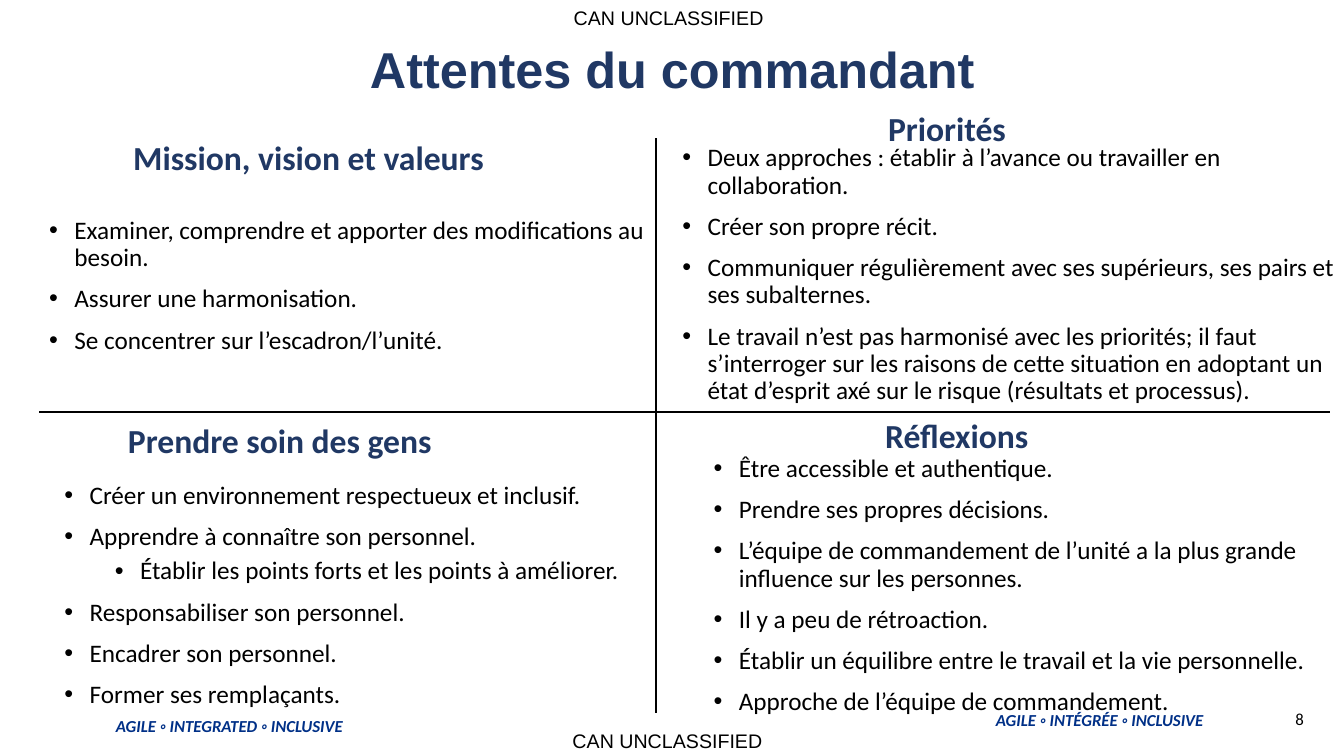
"""Builds the four-quadrant slide on the commander's expectations."""
from dataclasses import dataclass

from lxml import etree
from pptx import Presentation
from pptx import util as u
from pptx.dml.color import RGBColor
from pptx.enum import shapes, text
from pptx.oxml import ns

COLORS = {"text": "000000", "heading": "203864", "motto": "003087"}
INDENT = 0.25
SUB_INDENT = 0.75


@dataclass(frozen=True)
class Box:
    left: float
    top: float
    width: float
    height: float


@dataclass(frozen=True)
class Label:
    box: Box
    words: str
    size: float
    color: str = "text"
    font: str = "Calibri"
    bold: bool = False
    italic: bool = False
    centered: bool = False
    wrap: bool = True
    inset: bool = True
    bottom: bool = False
    spacing: float = 1.0


@dataclass(frozen=True)
class Bullet:
    words: str
    level: int = 0


@dataclass(frozen=True)
class Quadrant:
    heading: Label
    box: Box
    bullets: tuple[Bullet, ...]


@dataclass(frozen=True)
class Divider:
    x1: float
    y1: float
    x2: float
    y2: float


def heading(box: Box, words: str, centered: bool = False) -> Label:
    return Label(box, words, 24, "heading", bold=True, centered=centered, spacing=0.9)


def marking(box: Box, inset: bool) -> Label:
    return Label(box, "CAN UNCLASSIFIED", 14, font="Arial", wrap=False, inset=inset)


def motto(box: Box, words: str, inset: bool, bottom: bool) -> Label:
    return Label(box, words, 12, "motto", bold=True, italic=True,
                 inset=inset, bottom=bottom)


LABELS = (
    marking(Box(5.69, 0.06, 1.96, 0.3), inset=False),
    motto(Box(1.15, 6.9, 2.5, 0.4), "AGILE ◦ INTEGRATED ◦ INCLUSIVE", inset=False, bottom=True),
    motto(Box(9.78, 6.99, 2.37, 0.3), "AGILE ◦ INTÉGRÉE ◦ INCLUSIVE", inset=True, bottom=False),
    marking(Box(5.58, 7.18, 2.1, 0.34), inset=True),
    Label(Box(12.75, 6.98, 0.4, 0.3), "8", 12, wrap=False),
    Label(Box(0.92, 0.4, 11.5, 0.77), "Attentes du commandant", 36, "heading", "Arial",
          bold=True, centered=True, spacing=0.9),
)

QUADRANTS = (
    Quadrant(
        heading(Box(-0.15, 1.35, 6.42, 0.35), "Mission, vision et valeurs", centered=True),
        Box(0.39, 2.11, 6.6, 2.56),
        (
            Bullet("Examiner, comprendre et apporter des modifications au besoin."),
            Bullet("Assurer une harmonisation."),
            Bullet("Se concentrer sur l’escadron/l’unité."),
        ),
    ),
    Quadrant(
        heading(Box(8.71, 1.07, 2.96, 0.51), "Priorités"),
        Box(6.67, 1.39, 6.74, 2.72),
        (
            Bullet("Deux approches : établir à l’avance ou travailler en collaboration."),
            Bullet("Créer son propre récit."),
            Bullet("Communiquer régulièrement avec ses supérieurs, ses pairs et ses subalternes."),
            Bullet("Le travail n’est pas harmonisé avec les priorités; il faut s’interroger sur "
                   "les raisons de cette situation en adoptant un état d’esprit axé sur le "
                   "risque (résultats et processus)."),
        ),
    ),
    Quadrant(
        heading(Box(1.17, 4.16, 6.42, 0.35), "Prendre soin des gens"),
        Box(0.54, 4.74, 6.42, 2.56),
        (
            Bullet("Créer un environnement respectueux et inclusif."),
            Bullet("Apprendre à connaître son personnel."),
            Bullet("Établir les points forts et les points à améliorer.", level=1),
            Bullet("Responsabiliser son personnel."),
            Bullet("Encadrer son personnel."),
            Bullet("Former ses remplaçants."),
        ),
    ),
    Quadrant(
        heading(Box(8.68, 4.11, 3.71, 0.35), "Réflexions"),
        Box(6.98, 4.47, 6.42, 2.79),
        (
            Bullet("Être accessible et authentique."),
            Bullet("Prendre ses propres décisions."),
            Bullet("L’équipe de commandement de l’unité a la plus grande influence sur les personnes."),
            Bullet("Il y a peu de rétroaction."),
            Bullet("Établir un équilibre entre le travail et la vie personnelle."),
            Bullet("Approche de l’équipe de commandement."),
        ),
    ),
)

DIVIDERS = (Divider(6.51, 1.37, 6.51, 7.07), Divider(0.39, 4.09, 13.19, 4.09))


def add_frame(s, box: Box, wrap: bool = True):
    sp = s.shapes.add_textbox(u.Inches(box.left), u.Inches(box.top),
                              u.Inches(box.width), u.Inches(box.height))
    tf = sp.text_frame
    tf.word_wrap = wrap
    return tf


def add_run(p, words: str, size: float, color: str, font: str = "Calibri") -> None:
    r = p.add_run()
    r.text = words
    r.font.name = font
    r.font.size = u.Pt(size)
    r.font.color.rgb = RGBColor.from_string(COLORS[color])


def draw_label(s, label: Label) -> None:
    tf = add_frame(s, label.box, label.wrap)
    if not label.inset:
        tf.margin_left = tf.margin_right = tf.margin_top = tf.margin_bottom = 0
    if label.bottom:
        tf.vertical_anchor = text.MSO_ANCHOR.BOTTOM
    p = tf.paragraphs[0]
    p.alignment = text.PP_ALIGN.CENTER if label.centered else text.PP_ALIGN.LEFT
    p.line_spacing = label.spacing
    add_run(p, label.words, label.size, label.color, label.font)
    p.runs[0].font.bold = label.bold
    p.runs[0].font.italic = label.italic


def draw_bullets(s, quadrant: Quadrant) -> None:
    tf = add_frame(s, quadrant.box)
    for i, bullet in enumerate(quadrant.bullets):
        p = tf.add_paragraph() if i else tf.paragraphs[0]
        p.level = bullet.level
        p.line_spacing = 0.9
        if i:
            p.space_before = u.Pt(5 if bullet.level else 10)
        pPr = p._p.get_or_add_pPr()
        pPr.set("marL", str(u.Inches(SUB_INDENT if bullet.level else INDENT)))
        pPr.set("indent", str(-u.Inches(INDENT)))
        etree.SubElement(pPr, ns.qn("a:buFont")).set("typeface", "Arial")
        etree.SubElement(pPr, ns.qn("a:buChar")).set("char", "•")
        add_run(p, bullet.words, 18, "text")


def draw_divider(s, d: Divider) -> None:
    cxn = s.shapes.add_connector(shapes.MSO_CONNECTOR.STRAIGHT, u.Inches(d.x1),
                                 u.Inches(d.y1), u.Inches(d.x2), u.Inches(d.y2))
    cxn.line.color.rgb = RGBColor.from_string(COLORS["text"])
    cxn.line.width = u.Pt(1.5)
    etree.SubElement(cxn._element.spPr, ns.qn("a:effectLst"))


def main() -> None:
    prs = Presentation()
    prs.slide_width, prs.slide_height = u.Inches(13.33), u.Inches(7.5)
    s = prs.slides.add_slide(prs.slide_layouts[6])
    for label in LABELS:
        draw_label(s, label)
    for quadrant in QUADRANTS:
        draw_bullets(s, quadrant)
    for divider in DIVIDERS:
        draw_divider(s, divider)
    for quadrant in QUADRANTS:
        draw_label(s, quadrant.heading)
    prs.save("out.pptx")


if __name__ == "__main__":
    main()
